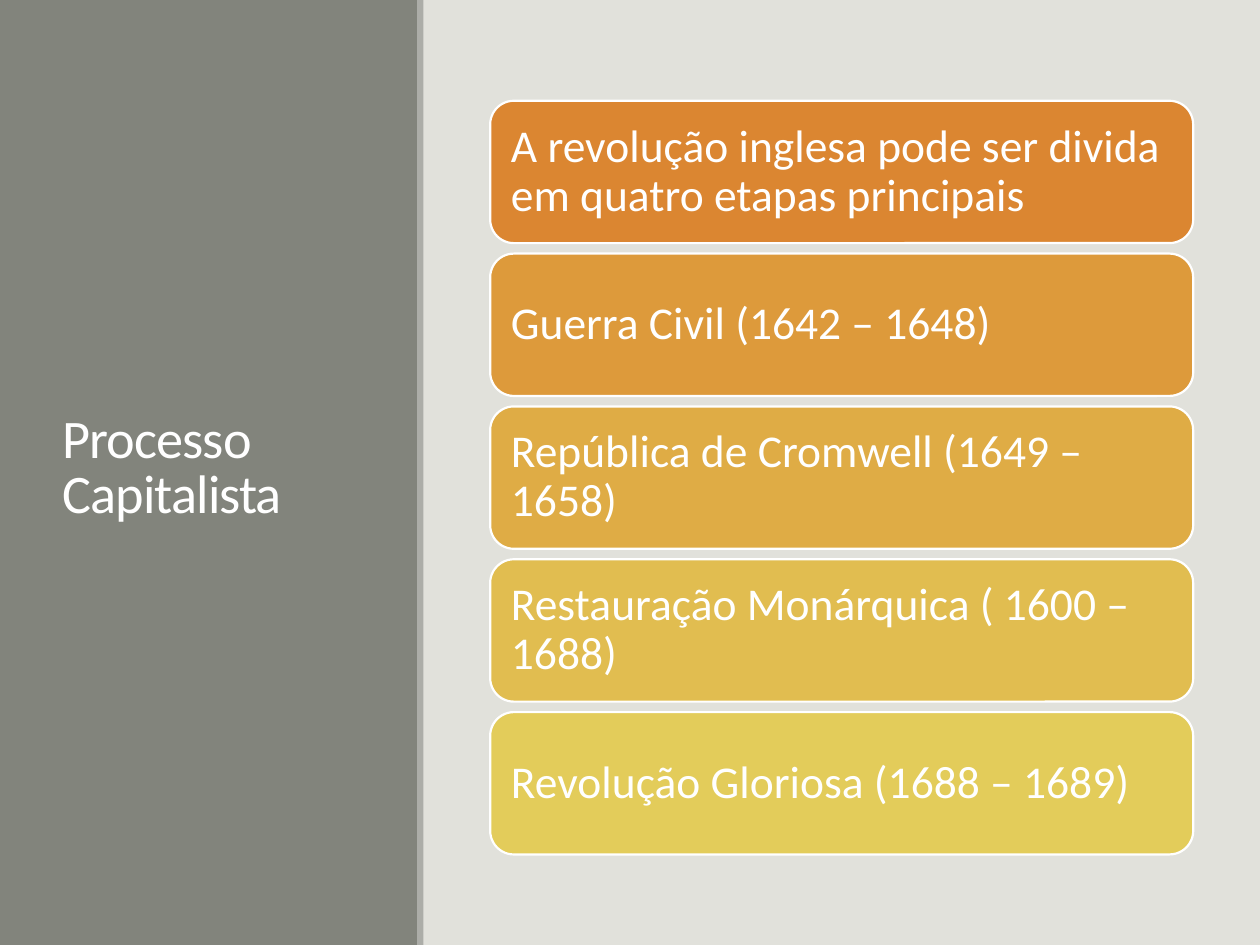
from dataclasses import dataclass

from pptx import Presentation
from pptx.dml.color import RGBColor
from pptx.enum.shapes import MSO_SHAPE as Shape
from pptx.enum.text import MSO_ANCHOR as Anchor, PP_ALIGN as Align
from pptx.util import Inches, Pt

WHITE = RGBColor(0xFF, 0xFF, 0xFF)
BACKGROUND = RGBColor(0xE1, 0xE1, 0xDB)
PANEL = RGBColor(0x82, 0x84, 0x7C)
STRIPE = RGBColor(0xAC, 0xAD, 0xA8)
FONT = "Calibri"

STEP_LEFT, STEP_TOP = 3.89, 0.8
STEP_WIDTH, STEP_HEIGHT = 5.58, 1.13
STEP_PITCH = 1.213
STEP_INSET = Inches(0.11)


@dataclass
class Step:
    text: str
    color: RGBColor


STEPS = [
    Step("A revolução inglesa pode ser divida em quatro etapas principais",
         RGBColor(0xDB, 0x86, 0x31)),
    Step("Guerra Civil (1642 – 1648)", RGBColor(0xDD, 0x9A, 0x3B)),
    Step("República de Cromwell (1649 – 1658)", RGBColor(0xDF, 0xAC, 0x45)),
    Step("Restauração Monárquica ( 1600 – 1688)", RGBColor(0xE1, 0xBD, 0x50)),
    Step("Revolução Gloriosa (1688 – 1689)", RGBColor(0xE3, 0xCC, 0x5A)),
]


def add_block(s, kind: Shape, left: float, top: float, width: float,
              height: float, color: RGBColor):
    """Add a filled shape without outline or shadow."""
    sp = s.shapes.add_shape(kind, Inches(left), Inches(top),
                            Inches(width), Inches(height))
    sp.shadow.inherit = False
    sp.fill.solid()
    sp.fill.fore_color.rgb = color
    sp.line.fill.background()
    return sp


def write(tf, text: str, size: float, line_spacing: float):
    """Fill a text frame with one white, left-aligned, middle-anchored run."""
    tf.word_wrap = True
    tf.vertical_anchor = Anchor.MIDDLE
    p = tf.paragraphs[0]
    p.alignment = Align.LEFT
    p.line_spacing = line_spacing
    r = p.add_run()
    r.text = text
    r.font.name = FONT
    r.font.size = Pt(size)
    r.font.color.rgb = WHITE
    return r


def add_title(s, text: str) -> None:
    sp = s.shapes.add_textbox(Inches(0.4), Inches(0.57), Inches(2.53), Inches(6.31))
    r = write(sp.text_frame, text, 31, 0.85)
    r.font._element.set("spc", "-50")


def add_step(s, index: int, step: Step) -> None:
    sp = add_block(s, Shape.ROUNDED_RECTANGLE, STEP_LEFT,
                   STEP_TOP + index * STEP_PITCH, STEP_WIDTH, STEP_HEIGHT, step.color)
    sp.line.color.rgb = WHITE
    sp.line.width = Pt(1.25)
    tf = sp.text_frame
    tf.margin_left = tf.margin_right = STEP_INSET
    tf.margin_top = tf.margin_bottom = STEP_INSET
    write(tf, step.text, 26, 0.9)


def main() -> None:
    prs = Presentation()
    prs.slide_width, prs.slide_height = Inches(10), Inches(7.5)
    s = prs.slides.add_slide(prs.slide_layouts[6])
    s.background.fill.solid()
    s.background.fill.fore_color.rgb = BACKGROUND

    add_block(s, Shape.RECTANGLE, 0, 0, 3.32, 7.5, PANEL)
    add_title(s, "Processo Capitalista")
    add_block(s, Shape.RECTANGLE, 3.31, 0, 0.05, 7.5, STRIPE)
    for index, step in enumerate(STEPS):
        add_step(s, index, step)

    prs.save("out.pptx")


if __name__ == "__main__":
    main()
